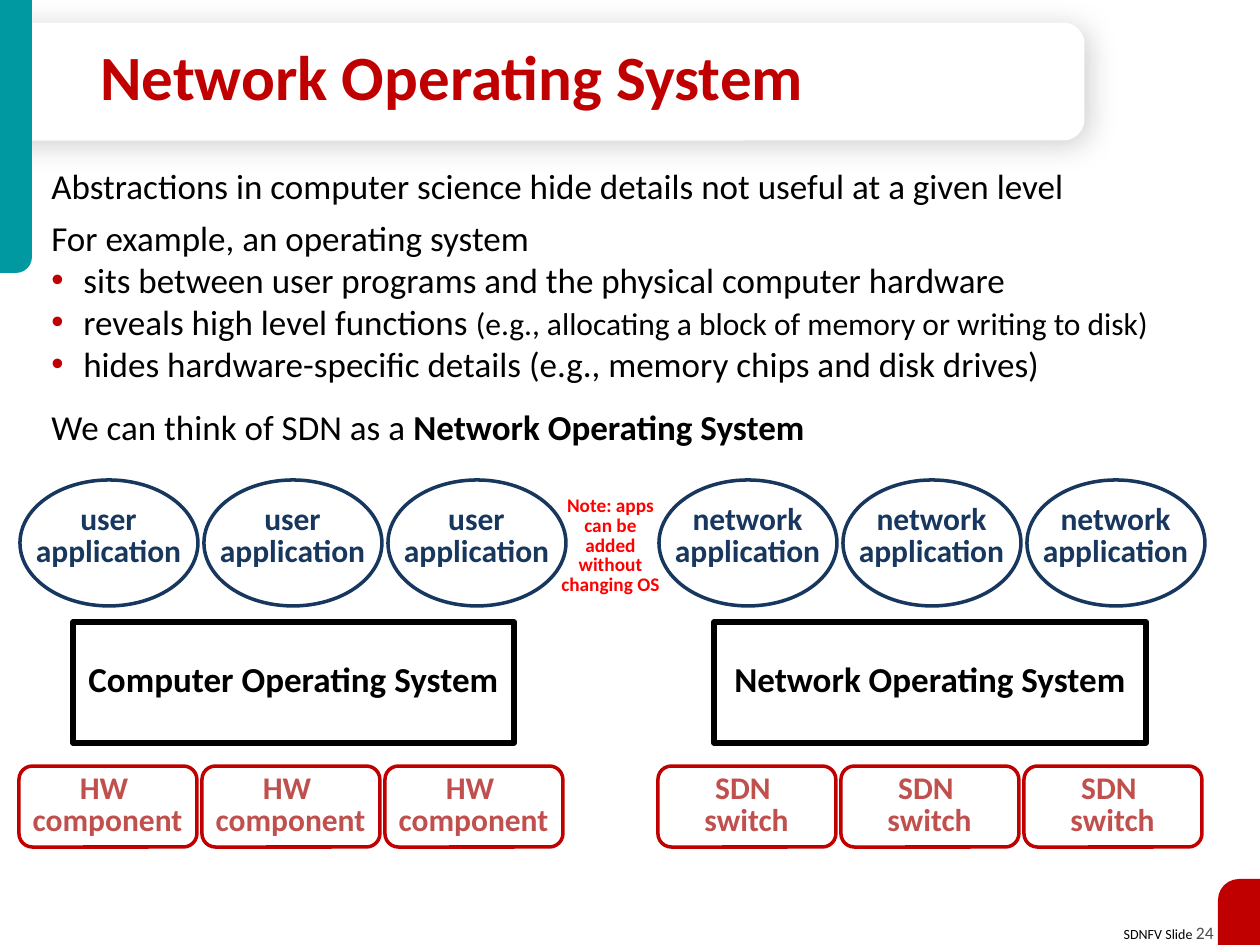
"""Build the Network Operating System slide."""
from lxml import etree
from pptx import Presentation
from pptx.dml.color import RGBColor
from pptx.enum.shapes import MSO_SHAPE
from pptx.enum.text import MSO_ANCHOR, PP_ALIGN
from pptx.oxml.ns import qn
from pptx.util import Emu, Pt

RECTANGLE, ROUNDED, ELLIPSE = MSO_SHAPE.RECTANGLE, MSO_SHAPE.ROUNDED_RECTANGLE, MSO_SHAPE.OVAL
ONE_ROUND, TWO_ROUND = MSO_SHAPE.ROUND_1_RECTANGLE, MSO_SHAPE.ROUND_2_SAME_RECTANGLE
LEFT, CENTER, RIGHT = PP_ALIGN.LEFT, PP_ALIGN.CENTER, PP_ALIGN.RIGHT
TOP, MIDDLE = MSO_ANCHOR.TOP, MSO_ANCHOR.MIDDLE

PX = 914400 / 126
THEME = {
    "font": "Calibri", "white": "FFFFFF", "black": "000000", "teal": "0098A1",
    "red": "C00000", "navy": "17375E", "brick": "C0504D", "alert": "FF0000", "grey": "4D4D4D",
    "title": 36, "body": 20, "label": 18, "note": 11, "number": 10, "footer": 8,
}


def add_box(shapes, at, kind=None, fill=None, line=None, weight=2, anchor=TOP, wrap=True):
    """Add a preset shape, or a text box when no kind is given."""
    place = [Emu(round(value * PX)) for value in at]
    if kind is None:
        box = shapes.add_textbox(*place)
    else:
        box = shapes.add_shape(kind, *place)
        box.shadow.inherit = False
        if fill:
            box.fill.solid()
            box.fill.fore_color.rgb = RGBColor.from_string(THEME[fill])
        else:
            box.fill.background()
        if line:
            box.line.color.rgb = RGBColor.from_string(THEME[line])
            box.line.width = Pt(weight)
        else:
            box.line.fill.background()
    box.text_frame.word_wrap = wrap
    box.text_frame.vertical_anchor = anchor
    return box


def write(box, text, size="body", color="black", bold=False, align=LEFT, spacing=None,
          before=0, hanging=0, bullet=None, join=False):
    """Write each line of text as a paragraph, or join it to the last one."""
    frame = box.text_frame
    for words in text.split("\n"):
        para = frame.paragraphs[-1]
        if not join:
            if para.runs:
                para = frame.add_paragraph()
            para.alignment = align
            if spacing:
                para.line_spacing = spacing
            if before:
                para.space_before = Pt(before)
            if hanging:
                properties = para._p.get_or_add_pPr()
                indent = round(hanging * PX)
                properties.set("marL", str(indent))
                properties.set("indent", str(-indent))
                if bullet:
                    tint = etree.SubElement(properties, qn("a:buClr"))
                    etree.SubElement(tint, qn("a:srgbClr"), val=THEME["red"])
                    etree.SubElement(properties, qn("a:buFont"), typeface="Arial")
                    etree.SubElement(properties, qn("a:buChar"), char=bullet)
        span = para.add_run()
        span.text = words
        span.font.name = THEME["font"]
        span.font.size = Pt(THEME[size])
        span.font.bold = bold
        span.font.color.rgb = RGBColor.from_string(THEME[color])


deck = Presentation()
deck.slide_width, deck.slide_height = Emu(round(1260 * PX)), Emu(round(945 * PX))
page = deck.slides.add_slide(deck.slide_layouts[6])

footer = add_box(page.shapes, (1108, 916, 118, 34), wrap=False)
write(footer, "SDNFV Slide ", size="footer", align=RIGHT)
write(footer, "24", size="number", color="grey", join=True)

card = add_box(page.shapes, (483, -461, 118, 1085), TWO_ROUND, fill="white")
card.rotation = 90
card.adjustments[0] = 0.18
effects = card._element.spPr.find(qn("a:effectLst"))
shadow = etree.SubElement(effects, qn("a:outerShdw"), blurRad=str(Pt(17)), dist=str(Pt(3)),
                          dir="2700000", algn="tl", rotWithShape="0")
shade = etree.SubElement(shadow, qn("a:srgbClr"), val=THEME["black"])
etree.SubElement(shade, qn("a:alpha"), val="19000")

for at, color, flip in (((0, 0, 32, 273), "teal", "flipV"), ((1218, 879, 42, 66), "red", "flipH")):
    tab = add_box(page.shapes, at, ONE_ROUND, fill=color)
    tab.adjustments[0] = 0.5
    tab._element.spPr.get_or_add_xfrm().set(flip, "1")

title = add_box(page.shapes, (88, 37, 932, 89), anchor=MIDDLE)
write(title, "Network Operating System", size="title", color="red", bold=True, spacing=0.85)

body = add_box(page.shapes, (39, 158, 1158, 297))
write(body, "Abstractions in computer science hide details not useful at a given level", hanging=32)
write(body, "For example, an operating system", hanging=32, before=6)
write(body, "sits between user programs and the physical computer hardware\nreveals high level functions ",
      hanging=32, bullet="•")
write(body, "(e.g., allocating a block of memory or writing to disk)", size="label", join=True)
write(body, "hides hardware-specific details (e.g., memory chips and disk drives)",
      hanging=32, bullet="•")
write(body, "We can think of SDN as a ", hanging=32, before=12)
write(body, "Network Operating System", bold=True, join=True)

STACKS = (
    (20, "user\napplication", "Computer Operating System", (73, 622, 441, 121), "HW \ncomponent"),
    (659, "network\napplication", "Network Operating System", (714, 622, 432, 121), "SDN \nswitch"),
)
for left, application, system, system_at, device in STACKS:
    for column in range(3):
        x = left + 184 * column
        group = page.shapes.add_group_shape()
        add_box(group.shapes, (x, 480, 178, 126), ELLIPSE, line="navy")
        label = add_box(group.shapes, (x - 4, 499, 185, 78))
        write(label, application, size="label", color="navy", bold=True, align=CENTER, spacing=0.85)

        x = left - 1 + 183 * column
        group = page.shapes.add_group_shape()
        label = add_box(group.shapes, (x - 2, 768, 181, 78))
        write(label, device, size="label", color="brick", bold=True, align=CENTER, spacing=0.85)
        add_box(group.shapes, (x, 766, 178, 81), ROUNDED, line="red")

    core = add_box(page.shapes, system_at, RECTANGLE, line="black", weight=3)
    core.text_frame.margin_top = Emu(round(42 * PX))
    write(core, system, bold=True, align=CENTER, spacing=0.85)

note = add_box(page.shapes, (547, 491, 127, 112))
write(note, "Note: apps can be added without changing OS", size="note", color="alert",
      bold=True, align=CENTER, spacing=0.85)

deck.save("out.pptx")
